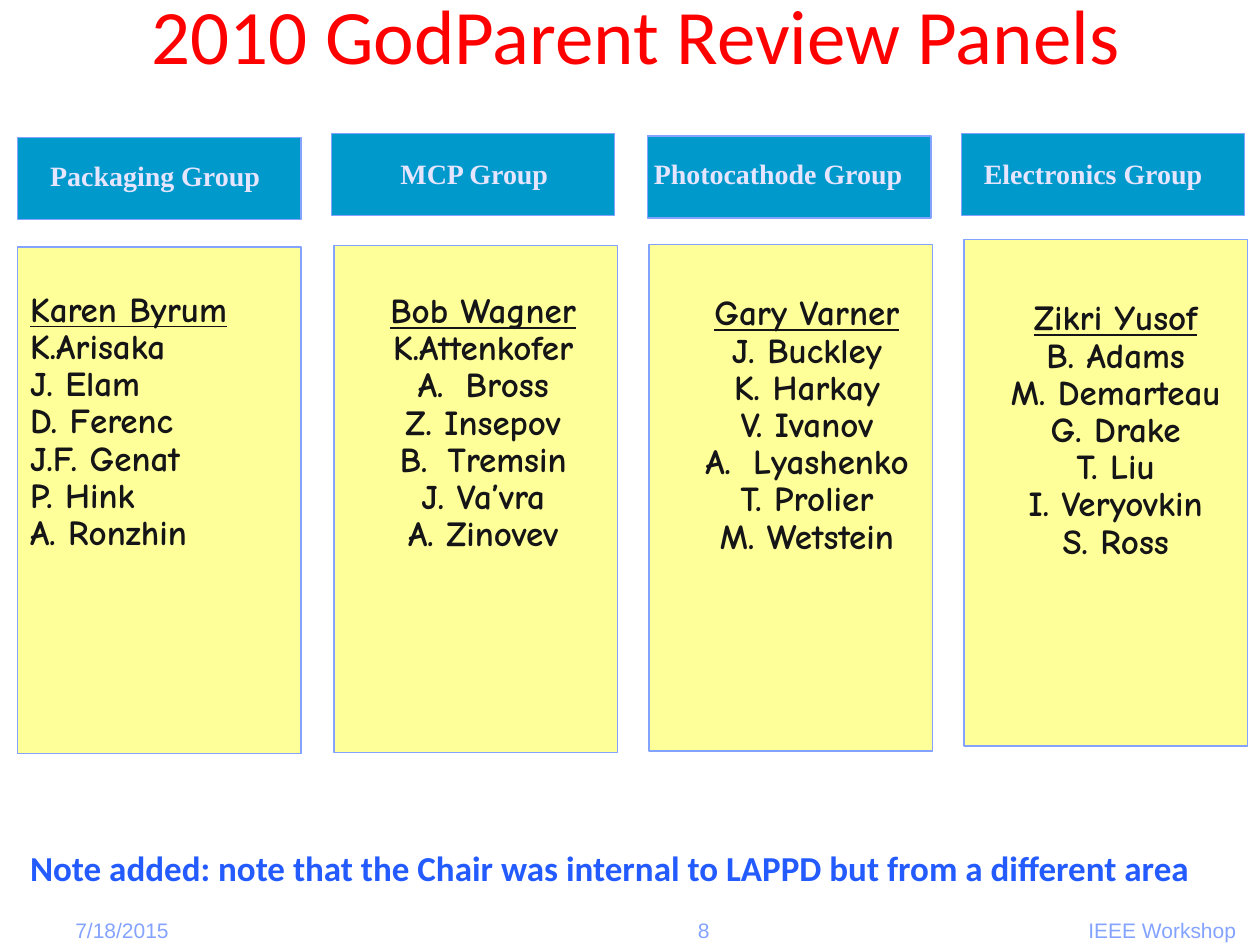
from lxml.etree import SubElement
from pptx import Presentation
from pptx.dml.color import RGBColor
from pptx.enum.shapes import MSO_SHAPE
from pptx.enum.text import MSO_ANCHOR, MSO_AUTO_SIZE, PP_ALIGN
from pptx.oxml.ns import qn
from pptx.util import Inches, Pt

TITLE = "2010 GodParent Review Panels"
NOTE = "Note added: note that the Chair was internal to LAPPD but from a different area"
FOOTERS = [
    ("7/18/2015", 0.5, 2.33, PP_ALIGN.LEFT),
    ("8", 4, 3.17, PP_ALIGN.CENTER),
    ("IEEE Workshop", 7.58, 2.33, PP_ALIGN.RIGHT),
]
PANELS = [
    {"group": "Packaging Group", "bar": (0.14, 1.09), "label": (0.3, 1.21, 2.12, 0.37),
     "card": (0.14, 1.96), "names": (0.14, 2.23, 2.29, 2.27), "indent": 0,
     "members": ["Karen Byrum", "K.Arisaka", "J. Elam", "D. Ferenc", "J.F. Genat",
                 "P. Hink", "A. Ronzhin"], "lettered": {}},
    {"group": "MCP Group", "bar": (2.63, 1.06), "label": (3.08, 1.19, 2.12, 0.37),
     "card": (2.65, 1.95), "names": (2.69, 2.24, 2.29, 2.26), "indent": 0.38,
     "members": ["Bob Wagner", "K.Attenkofer", "Bross", "Z. Insepov", "Tremsin",
                 "J. Va’vra", "A. Zinovev"], "lettered": {"Bross": 1, "Tremsin": 2}},
    {"group": "Photocathode Group", "bar": (5.14, 1.08), "label": (5.09, 1.19, 2.42, 0.37),
     "card": (5.15, 1.94), "names": (5.26, 2.26, 2.29, 2.52), "indent": 0.38,
     "members": ["Gary Varner", "J. Buckley", "K. Harkay", "V. Ivanov", "Lyashenko",
                 "T. Prolier", "M. Wetstein"], "lettered": {"Lyashenko": 1}},
    {"group": "Electronics Group", "bar": (7.63, 1.06), "label": (7.71, 1.19, 2.12, 0.37),
     "card": (7.65, 1.9), "names": (7.71, 2.3, 2.29, 2.26), "indent": 0.5,
     "members": ["Zikri Yusof", "B. Adams", "M. Demarteau", "G. Drake", "T. Liu",
                 "I. Veryovkin", "S. Ross"], "lettered": {}},
]
BAR_SIZE = (2.25, 0.65)
CARD_SIZE = (2.25, 4.02)
OUTLINE = "84A3FF"


def color(value):
    return RGBColor.from_string(value)


TITLE_FONT = {"name": "Calibri", "size": Pt(44), "color": "FF0000"}
LABEL_FONT = {"name": "Times New Roman", "size": Pt(16), "bold": True, "color": "E5E5FF"}
MEMBER_FONT = {"name": "Comic Neue", "size": Pt(20), "bold": True, "color": "151517"}
CHAIR_FONT = {**MEMBER_FONT, "underline": True}
NOTE_FONT = {"name": "Calibri", "size": Pt(20), "bold": True, "color": "235BFF"}
FOOTER_FONT = {"name": "Arial", "size": Pt(12), "color": OUTLINE}


def add_rectangle(slide, position, size, fill):
    shape = slide.shapes.add_shape(
        MSO_SHAPE.RECTANGLE, *(Inches(value) for value in position + size))
    shape.shadow.inherit = False
    shape.fill.solid()
    shape.fill.fore_color.rgb = color(fill)
    shape.line.color.rgb = color(OUTLINE)
    shape.line.width = Pt(0.75)


def add_frame(slide, box, anchor=MSO_ANCHOR.TOP, auto_size=MSO_AUTO_SIZE.SHAPE_TO_FIT_TEXT):
    frame = slide.shapes.add_textbox(*(Inches(value) for value in box)).text_frame
    settings = {"word_wrap": True, "vertical_anchor": anchor, "auto_size": auto_size}
    for name, value in settings.items():
        setattr(frame, name, value)
    return frame


def write(paragraph, text, font, align=PP_ALIGN.LEFT, line_spacing=None, before=None):
    paragraph.alignment = align
    if line_spacing:
        paragraph.line_spacing = line_spacing
    if before:
        space = SubElement(paragraph._p.get_or_add_pPr(), qn("a:spcBef"))
        SubElement(space, qn("a:spcPct")).set("val", str(before * 1000))
    run = paragraph.add_run()
    run.text = text
    for name, value in font.items():
        if name == "color":
            run.font.color.rgb = color(value)
        else:
            setattr(run.font, name, value)


def add_members(slide, panel):
    frame = add_frame(slide, panel["names"])
    indent = panel["indent"]
    align = PP_ALIGN.CENTER if indent else PP_ALIGN.LEFT
    for index, member in enumerate(panel["members"]):
        if index == 0:
            paragraph = frame.paragraphs[0]
            write(paragraph, member, CHAIR_FONT, align, before=50)
        else:
            paragraph = frame.add_paragraph()
            write(paragraph, member, MEMBER_FONT, align, 0.8, 10)
        properties = paragraph._p.get_or_add_pPr()
        if indent:
            properties.set("marL", str(Inches(indent)))
            properties.set("indent", str(-Inches(indent)))
        if member in panel["lettered"]:
            number = SubElement(properties, qn("a:buAutoNum"))
            number.set("type", "alphaUcPeriod")
            number.set("startAt", str(panel["lettered"][member]))


def main():
    presentation = Presentation()
    presentation.slide_width = Inches(10)
    presentation.slide_height = Inches(7.5)
    slide = presentation.slides.add_slide(presentation.slide_layouts[6])

    for text, left, width, align in FOOTERS:
        frame = add_frame(slide, (left, 7.18, width, 0.4), MSO_ANCHOR.MIDDLE, MSO_AUTO_SIZE.NONE)
        write(frame.paragraphs[0], text, FOOTER_FONT, align)

    title = add_frame(slide, (0.55, 0, 9, 0.71), MSO_ANCHOR.MIDDLE, MSO_AUTO_SIZE.NONE)
    write(title.paragraphs[0], TITLE, TITLE_FONT, PP_ALIGN.CENTER, 0.7)

    for panel in PANELS:
        add_rectangle(slide, panel["bar"], BAR_SIZE, "0099CC")
        add_rectangle(slide, panel["card"], CARD_SIZE, "FFFF99")
    for panel in PANELS:
        label = add_frame(slide, panel["label"])
        write(label.paragraphs[0], panel["group"], LABEL_FONT, before=50)
        add_members(slide, panel)

    note = add_frame(slide, (0.14, 6.75, 9.86, 0.36))
    write(note.paragraphs[0], NOTE, NOTE_FONT, line_spacing=0.75)
    presentation.save("out.pptx")


if __name__ == "__main__":
    main()
